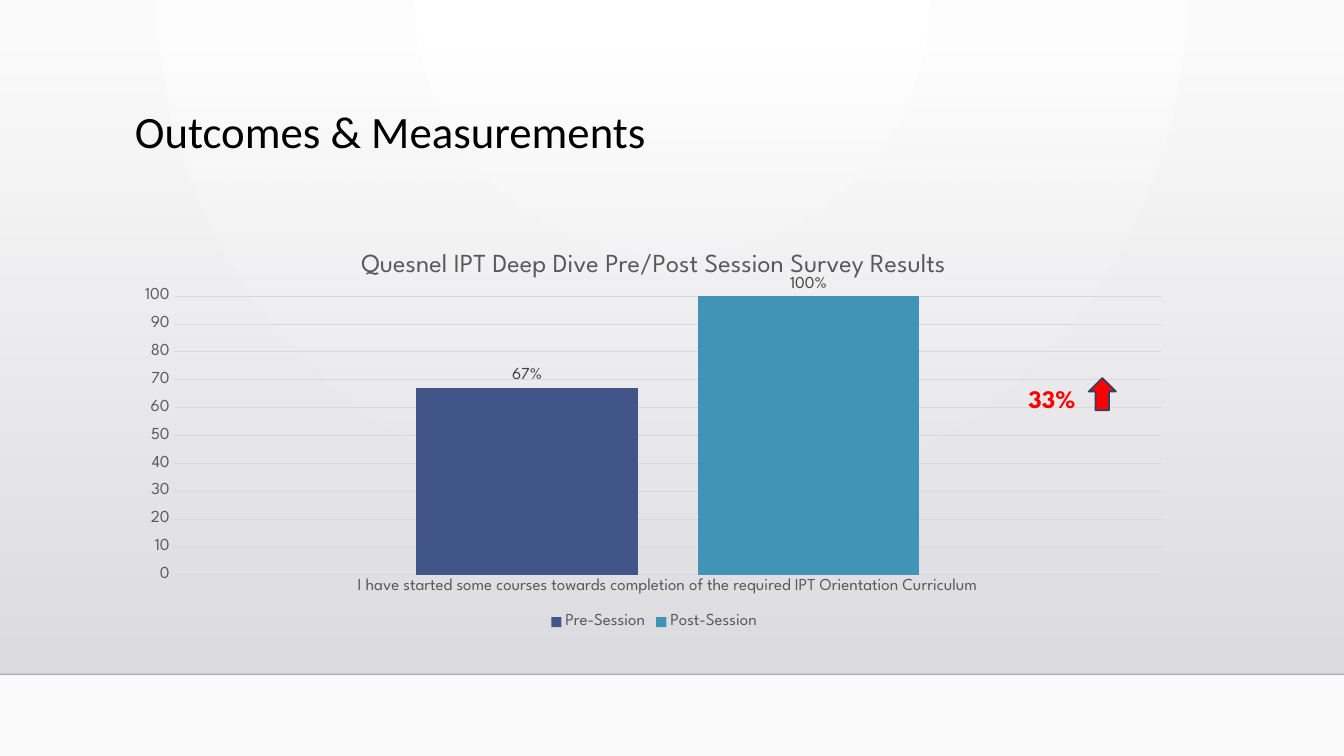
from lxml.etree import SubElement
from pptx import Presentation
from pptx.chart.data import CategoryChartData
from pptx.dml.color import RGBColor
from pptx.enum.chart import XL_CHART_TYPE, XL_LABEL_POSITION, XL_LEGEND_POSITION, XL_TICK_MARK
from pptx.enum.shapes import MSO_CONNECTOR, MSO_SHAPE
from pptx.enum.text import PP_ALIGN
from pptx.oxml import parse_xml
from pptx.oxml.ns import nsdecls, qn
from pptx.util import Inches, Pt

THEME = {
    "heading_font": "Calibri", "body_font": "League Spartan",
    "heading_size": 32, "chart_title_size": 18.6, "gain_size": 18, "chart_size": 12,
    "ink": "000000", "muted": "595959", "value": "404040", "grid": "D9D9D9",
    "glow": ("FFFFFF", "FAFAFA"), "shade": ("DCDCE0", "DEDEE2"), "floor": "000001",
    "gain": "FF0000", "arrow_edge": "303F65",
    "pre": "415588", "post": "4294B6",
}

deck = Presentation()
deck.slide_width, deck.slide_height = Inches(13.33), Inches(7.5)
slide = deck.slides.add_slide(deck.slide_layouts[6])
column, row = deck.slide_width / 100, deck.slide_height / 100


def area(left, top, wide, high):
    return int(left * column), int(top * row), int(wide * column), int(high * row)


def style(font, size, color, face=THEME["body_font"], bold=False):
    font.size, font.name, font.bold = Pt(size), face, bold
    font.color.rgb = RGBColor.from_string(color)


glow = slide.background.fill
glow.gradient()
for stop, color in zip(glow.gradient_stops, THEME["glow"]):
    stop.color.rgb = RGBColor.from_string(color)
glow_xml = slide.element.find(".//" + qn("a:gradFill"))
glow_xml.replace(glow_xml.find(qn("a:lin")), parse_xml(
    f'<a:path {nsdecls("a")} path="circle">'
    '<a:fillToRect l="43000" t="0" r="43000" b="100000"/></a:path>'))

shade = slide.shapes.add_shape(MSO_SHAPE.RECTANGLE, *area(0, 6.8, 100, 82.4))
shade.shadow.inherit = False
shade.line.fill.background()
shade.fill.gradient()
shade.fill.gradient_angle = 270
for stop, color in zip(shade.fill.gradient_stops, THEME["shade"]):
    stop.color.rgb = RGBColor.from_string(color)
clear_end = shade.element.find(".//" + qn("a:gs")).find(qn("a:srgbClr"))
SubElement(clear_end, qn("a:alpha")).set("val", "0")

floor_y = int(89.2 * row)
floor = slide.shapes.add_connector(MSO_CONNECTOR.STRAIGHT, 0, floor_y, deck.slide_width, floor_y)
floor.line.width = Pt(1)
floor.line.color.rgb = RGBColor.from_string(THEME["floor"])
floor_color = floor.element.spPr.find(".//" + qn("a:srgbClr"))
SubElement(floor_color, qn("a:alpha")).set("val", "20000")
SubElement(floor.element.spPr, qn("a:effectLst"))

heading = slide.shapes.add_textbox(*area(9.3, 13.87, 78.75, 15.33)).text_frame
heading.word_wrap = True
heading.paragraphs[0].line_spacing = 0.9
heading_run = heading.paragraphs[0].add_run()
heading_run.text = "Outcomes & Measurements"
style(heading_run.font, THEME["heading_size"], THEME["ink"], THEME["heading_font"])

survey = CategoryChartData(number_format='0"%"')
survey.categories = ["I have started some courses towards completion of the required IPT Orientation Curriculum"]
survey.add_series("Pre-Session", [67])
survey.add_series("Post-Session", [100])
results = slide.shapes.add_chart(
    XL_CHART_TYPE.COLUMN_CLUSTERED, *area(9.3, 30.67, 78.75, 53.2), survey).chart
style(results.font, THEME["chart_size"], THEME["muted"])

results.has_title = True
results_title = results.chart_title.text_frame.paragraphs[0].add_run()
results_title.text = "Quesnel IPT Deep Dive Pre/Post Session Survey Results"
style(results_title.font, THEME["chart_title_size"], THEME["muted"])

results.has_legend = True
results.legend.position = XL_LEGEND_POSITION.BOTTOM
results.legend.include_in_layout = False
style(results.legend.font, THEME["chart_size"], THEME["muted"])

statement, percent = results.category_axis, results.value_axis
for axis in (statement, percent):
    axis.major_tick_mark = axis.minor_tick_mark = XL_TICK_MARK.NONE
    style(axis.tick_labels.font, THEME["chart_size"], THEME["muted"])
percent.minimum_scale, percent.maximum_scale, percent.major_unit = 0, 100, 10
percent.tick_labels.number_format = "0"
percent.tick_labels.number_format_is_linked = False
percent.format.line.fill.background()
for rule in (statement.format.line, percent.major_gridlines.format.line):
    rule.width = Pt(0.75)
    rule.color.rgb = RGBColor.from_string(THEME["grid"])

bars = results.plots[0]
bars.gap_width, bars.overlap, bars.vary_by_categories = 219, -27, False
for session, color in zip(bars.series, (THEME["pre"], THEME["post"])):
    session.format.fill.solid()
    session.format.fill.fore_color.rgb = RGBColor.from_string(color)
    values = session.data_labels
    values.show_value = True
    values.position = XL_LABEL_POSITION.OUTSIDE_END
    values.number_format, values.number_format_is_linked = '0"%"', False
    style(values.font, THEME["chart_size"], THEME["value"])

plot_area = results.element.find(".//" + qn("c:plotArea"))
for old_layout in plot_area.findall(qn("c:layout")):
    plot_area.remove(old_layout)
plot_area.insert(0, parse_xml(
    f'<c:layout {nsdecls("c")}><c:manualLayout><c:layoutTarget val="inner"/>'
    '<c:xMode val="edge"/><c:yMode val="edge"/>'
    '<c:x val="0.046"/><c:y val="0.16"/><c:w val="0.934"/><c:h val="0.693"/>'
    '</c:manualLayout></c:layout>'))

gain = slide.shapes.add_textbox(*area(72.6, 50, 11.33, 5.33)).text_frame
gain.word_wrap = True
gain.paragraphs[0].alignment = PP_ALIGN.CENTER
gain_run = gain.paragraphs[0].add_run()
gain_run.text = "33%"
style(gain_run.font, THEME["gain_size"], THEME["gain"], bold=True)

rise = slide.shapes.add_shape(MSO_SHAPE.UP_ARROW, *area(81, 50, 2.03, 4.27))
rise.shadow.inherit = False
rise.fill.solid()
rise.fill.fore_color.rgb = RGBColor.from_string(THEME["gain"])
rise.line.width = Pt(1.25)
rise.line.color.rgb = RGBColor.from_string(THEME["arrow_edge"])

deck.save("out.pptx")
